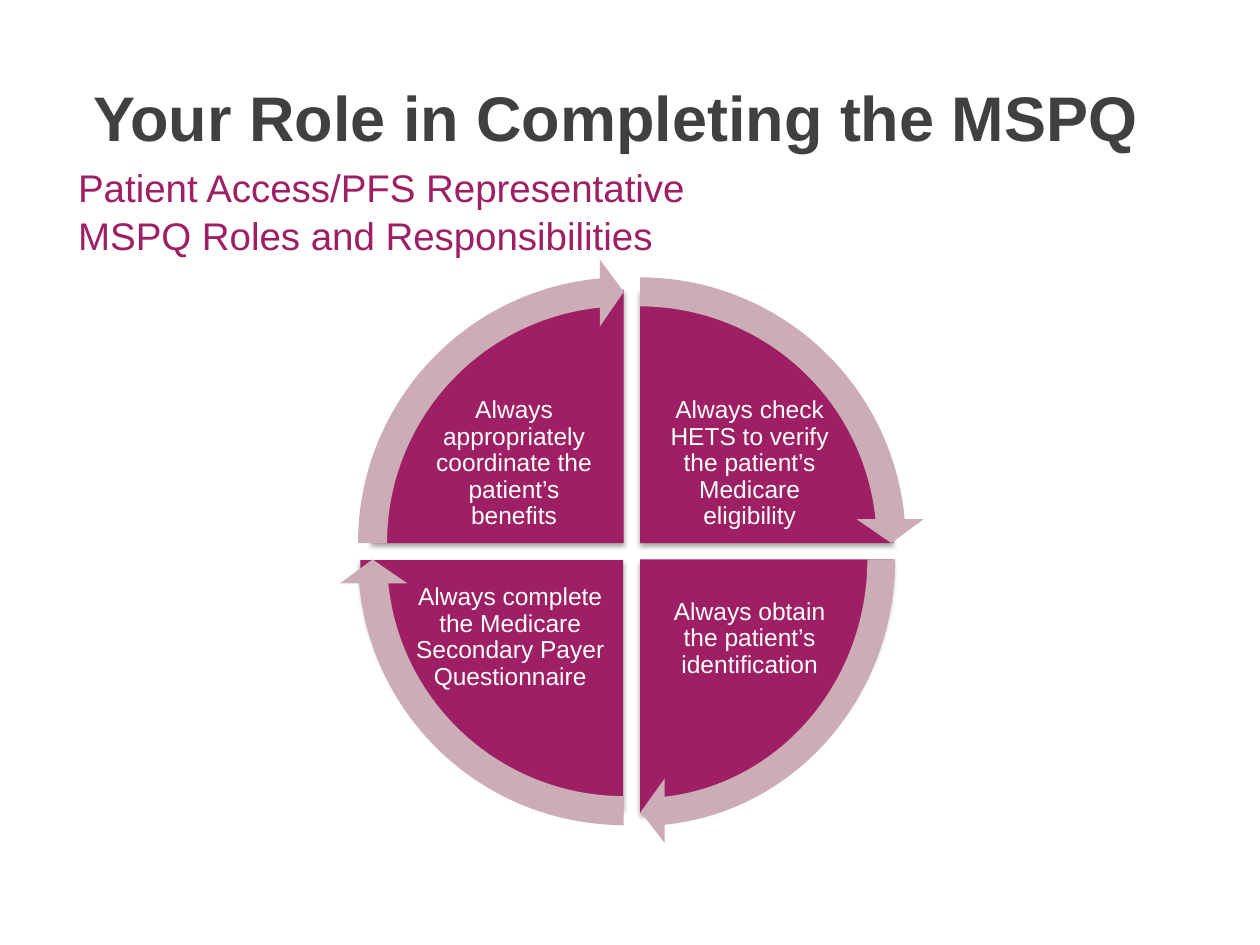
from pptx import Presentation
from pptx.dml.color import RGBColor
from pptx.enum.shapes import MSO_SHAPE
from pptx.enum.text import MSO_ANCHOR, PP_ALIGN
from pptx.oxml import parse_xml
from pptx.oxml.ns import nsdecls, qn
from pptx.util import Inches, Pt

PIE, ARROW = MSO_SHAPE.PIE, MSO_SHAPE.CIRCULAR_ARROW
TOP, MIDDLE = MSO_ANCHOR.TOP, MSO_ANCHOR.MIDDLE
LEFT, CENTER = PP_ALIGN.LEFT, PP_ALIGN.CENTER

COLORS = {"title": "404040", "plum": "9E1F63", "rose": "CCACB7", "white": "FFFFFF"}
FULL_TURN, QUARTER, ARROW_SWEEP = 216, 54, 50.725
SHADOW = (
    f'<a:outerShdw {nsdecls("a")} blurRad="{Pt(3.1)}" dist="{Pt(1.8)}" '
    'dir="5400000" rotWithShape="0"><a:srgbClr val="000000">'
    '<a:alpha val="35000"/></a:srgbClr></a:outerShdw>'
)

# start angle, pie box, text box, arrow box, wording
QUADRANTS = [
    (162, (3.07, 2.3, 4.02, 4.02), (5.21, 3.13, 1.48, 1.1), (2.82, 2.05, 4.52, 4.52),
     "Always check HETS to verify the patient’s Medicare eligibility"),
    (0, (3.07, 2.43, 4.02, 4.02), (5.21, 4.52, 1.48, 1.1), (2.92, 2.18, 4.33, 4.52),
     "Always obtain the patient’s identification"),
    (54, (2.86, 2.47, 4.17, 3.95), (3.28, 4.52, 1.54, 1.08), (2.69, 2.18, 4.52, 4.52),
     "Always complete the Medicare Secondary Payer Questionnaire"),
    (108, (2.94, 2.3, 4.02, 4.02), (3.34, 3.13, 1.48, 1.1), (2.69, 2.05, 4.52, 4.52),
     "Always appropriately coordinate the patient’s benefits"),
]


def write(tf, text, size, color, bold=False, align=LEFT, spacing=1.0):
    """Fill a text frame with one formatted paragraph."""
    p = tf.paragraphs[0]
    p.text = text
    p.alignment, p.line_spacing = align, spacing
    for r in p.runs:
        r.font.name, r.font.size, r.font.bold = "Arial", Pt(size), bold
        r.font.color.rgb = RGBColor.from_string(COLORS[color])


class SlideBuilder:
    """Holds the current slide and draws its elements in one style."""

    def __init__(self, slide):
        self.s = slide

    def text(self, box, text, margins=(0, 0, 0, 0), anchor=TOP, **style):
        """Add a wrapped text box."""
        tf = self.s.shapes.add_textbox(*map(Inches, box)).text_frame
        tf.word_wrap, tf.vertical_anchor = True, anchor
        tf.margin_left, tf.margin_top, tf.margin_right, tf.margin_bottom = map(Inches, margins)
        write(tf, text, **style)

    def shape(self, kind, box, color, adjustments):
        """Add a flat filled shape."""
        sp = self.s.shapes.add_shape(kind, *map(Inches, box))
        sp.shadow.inherit = False
        sp.fill.solid()
        sp.fill.fore_color.rgb = RGBColor.from_string(COLORS[color])
        sp.line.fill.background()
        for i, value in enumerate(adjustments):
            sp.adjustments[i] = value
        return sp

    def pie(self, box, start):
        """Add a shadowed quarter pie."""
        sp = self.shape(PIE, box, "plum", (start, (start + QUARTER) % FULL_TURN))
        sp._element.spPr.find(qn("a:effectLst")).append(parse_xml(SHADOW))

    def arrow(self, box, start):
        """Add a curved arrow around one quarter."""
        self.shape(ARROW, box, "rose", (0.051, 3.275, start + ARROW_SWEEP, start, 0.059))


def main():
    """Build and save the slide."""
    prs = Presentation()
    prs.slide_width, prs.slide_height = Inches(10), Inches(7.5)
    b = SlideBuilder(prs.slides.add_slide(prs.slide_layouts[6]))
    b.text((0.62, 1.28, 8.75, 0.72),
           "Patient Access/PFS Representative\vMSPQ Roles and Responsibilities",
           size=22, color="plum", spacing=1.05)
    b.text((0.5, 0.3, 9, 1.25), "Your Role in Completing the MSPQ",
           margins=(0.24, 0.05, 0.1, 0.05), anchor=MIDDLE, size=36, color="title", bold=True)
    for start, pie_box, text_box, _, label in QUADRANTS:
        b.pie(pie_box, start)
        b.text(text_box, label, margins=(0.02,) * 4, anchor=MIDDLE,
               size=14, color="white", align=CENTER, spacing=0.9)
    for start, _, _, arrow_box, _ in QUADRANTS:
        b.arrow(arrow_box, start)
    prs.save("out.pptx")


if __name__ == "__main__":
    main()
